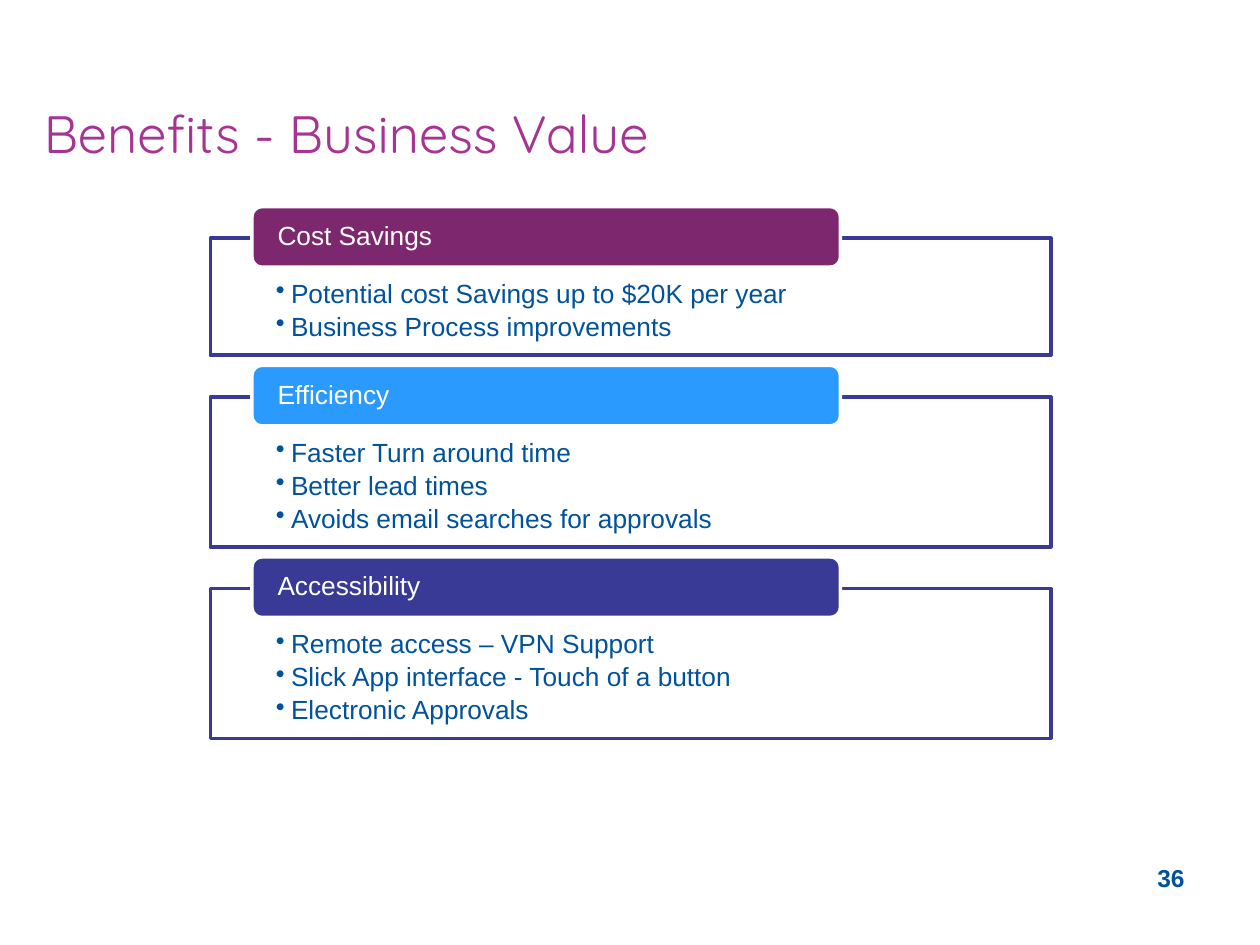
"""Build the business value slide with three benefit panels."""
from lxml import etree
from pptx import Presentation
from pptx.dml.color import RGBColor
from pptx.enum.shapes import MSO_SHAPE
from pptx.enum.text import MSO_ANCHOR, PP_ALIGN
from pptx.oxml.ns import qn
from pptx.util import Inches, Pt

RECT, ROUND = MSO_SHAPE.RECTANGLE, MSO_SHAPE.ROUNDED_RECTANGLE
TOP, MIDDLE = MSO_ANCHOR.TOP, MSO_ANCHOR.MIDDLE
LEFT, RIGHT = PP_ALIGN.LEFT, PP_ALIGN.RIGHT
WHITE = RGBColor(0xFF, 0xFF, 0xFF)
BLUE = RGBColor(0x00, 0x52, 0x9C)
INDIGO = RGBColor(0x39, 0x39, 0x96)
PLUM = RGBColor(0x7D, 0x27, 0x6E)
SKY = RGBColor(0x2B, 0x9A, 0xFF)
PURPLE = RGBColor(0xA6, 0x34, 0x93)

PANELS = [
    ("Cost Savings", PLUM, 0.93,
     ["Potential cost Savings up to $20K per year",
      "Business Process improvements"]),
    ("Efficiency", SKY, 1.19,
     ["Faster Turn around time", "Better lead times",
      "Avoids email searches for approvals"]),
    ("Accessibility", INDIGO, 1.19,
     ["Remote access – VPN Support",
      "Slick App interface - Touch of a button",
      "Electronic Approvals"]),
]


def write(shape, lines, size, color, insets, anchor=TOP, align=LEFT,
          font="Arial", bold=False, bullet=False):
    frame = shape.text_frame
    frame.word_wrap = True
    frame.vertical_anchor = anchor
    side, top, base = insets
    frame.margin_left = frame.margin_right = Inches(side)
    frame.margin_top, frame.margin_bottom = Inches(top), Inches(base)
    frame.text = "\n".join(lines)
    for para in frame.paragraphs:
        para.alignment = align
        para.line_spacing = 0.9
        if bullet:
            para.level = 1
            para.space_after = Pt(2.6)
            props = para._p.get_or_add_pPr()
            props.set("marL", str(Inches(0.12)))
            props.set("indent", str(Inches(-0.12)))
            etree.SubElement(props, qn("a:buChar"), char="•")
        for run in para.runs:
            run.font.name = font
            run.font.size = Pt(size)
            run.font.bold = bold
            run.font.color.rgb = color


def block(kind, left, top, width, height, fill, line):
    shape = slide.shapes.add_shape(
        kind, Inches(left), Inches(top), Inches(width), Inches(height))
    shape.shadow.inherit = False
    shape.fill.solid()
    shape.fill.fore_color.rgb = fill
    shape.line.color.rgb = line
    shape.line.width = Pt(2)
    return shape


deck = Presentation()
deck.slide_width, deck.slide_height = Inches(10), Inches(7.5)
slide = deck.slides.add_slide(deck.slide_layouts[6])

title = slide.shapes.add_textbox(
    Inches(0.25), Inches(0.86), Inches(9.33), Inches(0.92))
write(title, ["Benefits - Business Value"], 30, PURPLE, (0.1, 0, 0),
      font="Quicksand")

number = slide.shapes.add_textbox(
    Inches(7.17), Inches(6.83), Inches(2.33), Inches(0.52))
write(number, ["36"], 14, BLUE, (0.1, 0.05, 0.05), align=RIGHT, bold=True)

top = 1.89
for name, color, height, points in PANELS:
    panel = block(RECT, 1.67, top, 6.67, height, WHITE, INDIGO)
    write(panel, points, 15, BLUE, (0.52, 0.34, 0.12), bullet=True)
    header = block(ROUND, 2, top - 0.25, 4.67, 0.48, color, WHITE)
    write(header, [name], 15, WHITE, (0.18, 0, 0), anchor=MIDDLE)
    top += height + 0.33

deck.save("out.pptx")
